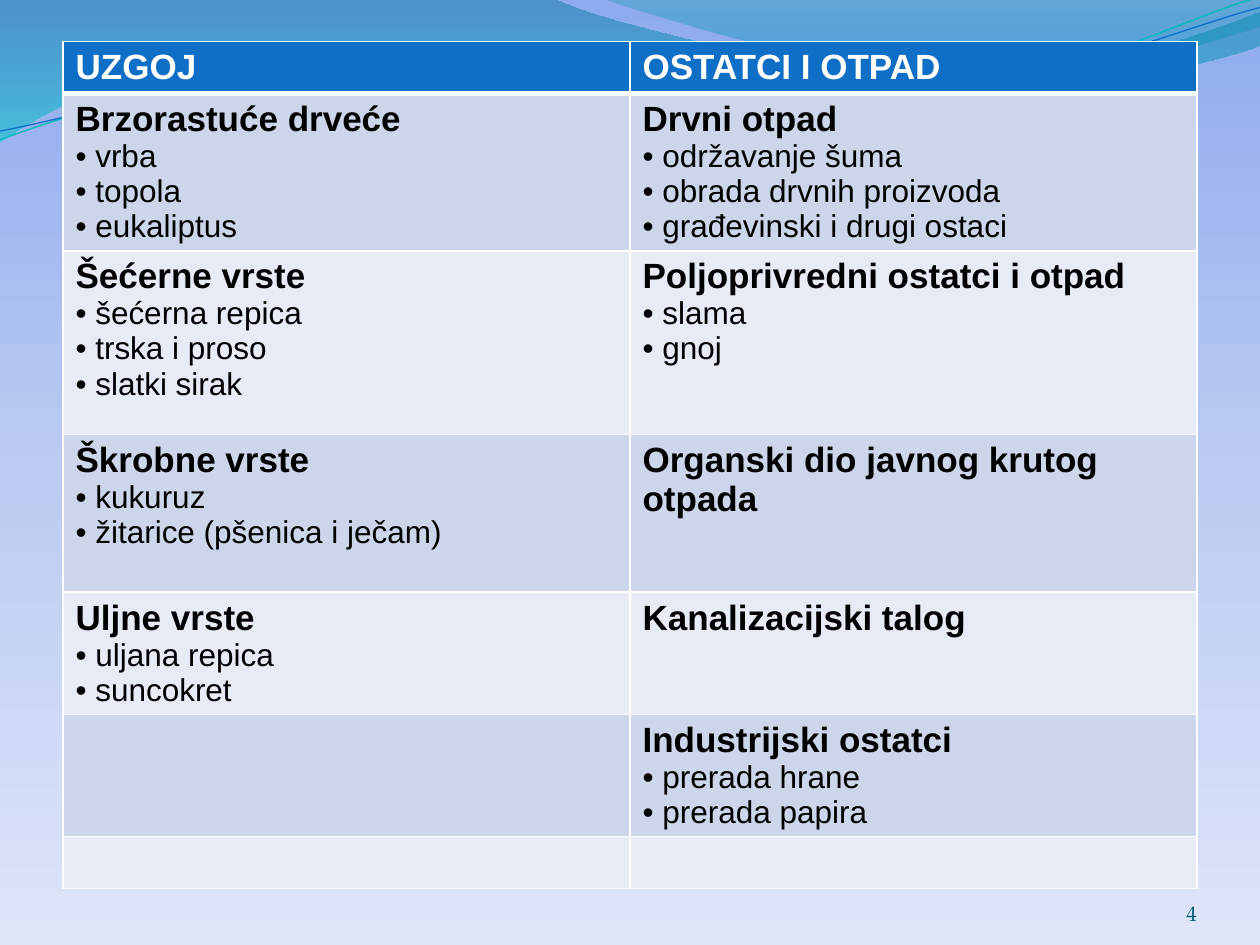
from lxml import etree
from pptx import Presentation
from pptx.dml.color import RGBColor
from pptx.enum.text import MSO_ANCHOR, PP_ALIGN
from pptx.oxml.ns import qn
from pptx.util import Inches, Pt

RIGHT = PP_ALIGN.RIGHT
BOTTOM = MSO_ANCHOR.BOTTOM
BODY_FONT = "Arial"
HEADER_FILL, BAND_FILLS = "0F6FC6", ("CCD5EA", "E7EBF5")
ROW_HEIGHTS = (0.41, 1.23, 1.46, 1.25, 0.97, 0.97, 0.41)

HEADERS = ("UZGOJ", "OSTATCI I OTPAD")
ROWS = (
    (("Brzorastuće drveće", "vrba", "topola", "eukaliptus"),
     ("Drvni otpad", "održavanje šuma", "obrada drvnih proizvoda",
      "građevinski i drugi ostaci")),
    (("Šećerne vrste", "šećerna repica", "trska i proso", "slatki sirak"),
     ("Poljoprivredni ostatci i otpad", "slama", "gnoj")),
    (("Škrobne vrste", "kukuruz", "žitarice (pšenica i ječam)"),
     ("Organski dio javnog krutog otpada",)),
    (("Uljne vrste", "uljana repica", "suncokret"),
     ("Kanalizacijski talog",)),
    ((), ("Industrijski ostatci", "prerada hrane", "prerada papira")),
    ((), ()),
)

SKY = ((0, "8EABEE", 100), (50, "BBCBF2", 100), (100, "DEE5F8", 100))
WAVES = (
    (((0, 0), (4.4, -0.01), (4.76, 0.17, 6.64, 0.63, 7.58, 0.63),
      (8.53, 0.63, 9.58, 0.26, 10, 0.09), (10.01, 0.36),
      (9.83, 0.44, 8.7, 0.76, 7.46, 0.75), (6.22, 0.75, 3.82, 0.28, 2.57, 0.34),
      (1.29, 0.36, 0.46, 0.83, -0.01, 1.13)),
     ((0, "0074A1", 45), (100, "00C6CF", 55))),
    (((4.79, -0.01), (5.09, 0.11, 6.82, 0.62, 7.69, 0.65),
      (8.56, 0.69, 9.61, 0.32, 10, 0.21), (10, 0)),
     ((0, "00A1A9", 30), (80, "008BBF", 45))),
)
STRANDS = (
    (((0, 1.11), (0.48, 0.93, 1.58, 0.57, 2.77, 0.52),
      (3.95, 0.47, 5.93, 0.89, 7.13, 0.8), (8.33, 0.71, 9.38, 0.15, 9.98, -0.02)),
     "0AB8BF", 0.85),
    (((0, 1.04), (0.47, 0.96, 1.64, 0.61, 2.83, 0.56),
      (4.03, 0.51, 5.97, 0.84, 7.17, 0.75), (8.36, 0.67, 9.41, 0.21, 10, 0.06)),
     "0F6FC6", 0.75),
)


def color(value):
    """Turn a hex string into a colour."""
    return RGBColor.from_string(value)


def set_gradient(fill, owner, stops):
    """Fill from top to bottom with (position, colour, opacity) stops."""
    fill.gradient()
    fill.gradient_angle = 270
    stop_list = next(owner.iter(qn("a:gsLst")))
    for old_stop in list(stop_list):
        stop_list.remove(old_stop)
    for position, value, opacity in stops:
        stop = etree.SubElement(stop_list, qn("a:gs"), pos=str(position * 1000))
        shade = etree.SubElement(stop, qn("a:srgbClr"), val=value)
        if opacity < 100:
            etree.SubElement(shade, qn("a:alpha"), val=str(opacity * 1000))


def merge_curves(shape, segments):
    """Join each three line steps of a curved segment into one cubic curve."""
    steps = iter(list(shape._element.iter(qn("a:lnTo"))))
    for segment in segments:
        first = next(steps)
        if len(segment) == 6:
            curve = etree.Element(qn("a:cubicBezTo"))
            first.addprevious(curve)
            for step in (first, next(steps), next(steps)):
                curve.append(step[0])
                step.getparent().remove(step)


def add_outline(page, segments, closed):
    """Draw a start point followed by line ends and curve controls."""
    places = [(Inches(segment[index]), Inches(segment[index + 1]))
              for segment in segments for index in range(0, len(segment), 2)]
    builder = page.shapes.build_freeform(*places[0])
    builder.add_line_segments(places[1:], close=closed)
    shape = builder.convert_to_shape()
    merge_curves(shape, segments[1:])
    shape.shadow.inherit = False
    return shape


def add_wave(page, segments, stops):
    """Add a translucent wave."""
    shape = add_outline(page, segments, True)
    set_gradient(shape.fill, shape._element, stops)
    shape.line.fill.background()


def add_strand(page, segments, value, width):
    """Add a thin curved line."""
    shape = add_outline(page, segments, False)
    shape.fill.background()
    shape.line.color.rgb = color(value)
    shape.line.width = Pt(width)


def write(para, text, size=18, font=BODY_FONT, value="000000", bold=False,
          align=None, bullet=None):
    """Write formatted text into a paragraph."""
    span = para.add_run()
    span.text = text
    span.font.size = Pt(size)
    span.font.name = font
    span.font.bold = bold
    span.font.color.rgb = color(value)
    if align is not None:
        para.alignment = align
    if bullet:
        properties = para._p.get_or_add_pPr()
        etree.SubElement(properties, qn("a:buFont"), typeface=font)
        etree.SubElement(properties, qn("a:buChar"), char=bullet)


def style_cell(cell, value, top=1, bottom=1):
    """Give a cell white borders and a fill."""
    properties = cell._tc.get_or_add_tcPr()
    for side, width in (("L", 1), ("R", 1), ("T", top), ("B", bottom)):
        border = etree.SubElement(properties, qn(f"a:ln{side}"), w=str(Pt(width)))
        paint = etree.SubElement(border, qn("a:solidFill"))
        etree.SubElement(paint, qn("a:srgbClr"), val="FFFFFF")
    cell.fill.solid()
    cell.fill.fore_color.rgb = color(value)


def fill_cell(cell, lines):
    """Write a bold heading and its bulleted items."""
    frame = cell.text_frame
    for index, line in enumerate(lines):
        if index == 0:
            write(frame.paragraphs[0], line, size=20, bold=True)
        else:
            write(frame.add_paragraph(), f" {line}", bullet="•")


def add_biomass_table(page):
    """Add the table of biomass sources."""
    table = page.shapes.add_table(len(ROW_HEIGHTS), len(HEADERS), Inches(0.5), Inches(0.33),
                                  Inches(9), Inches(sum(ROW_HEIGHTS))).table
    for row, height in zip(table.rows, ROW_HEIGHTS):
        row.height = Inches(height)
    for column, header in enumerate(HEADERS):
        cell = table.cell(0, column)
        style_cell(cell, HEADER_FILL, bottom=3)
        write(cell.text_frame.paragraphs[0], header, size=20, value="FFFFFF", bold=True)
    for number, contents in enumerate(ROWS, start=1):
        for column, lines in enumerate(contents):
            cell = table.cell(number, column)
            style_cell(cell, BAND_FILLS[(number - 1) % 2], top=3 if number == 1 else 1)
            fill_cell(cell, lines)


def add_page_number(page, text):
    """Add the page number at the lower right."""
    box = page.shapes.add_textbox(Inches(8.67), Inches(6.95), Inches(0.83), Inches(0.4))
    frame = box.text_frame
    frame.word_wrap = True
    frame.vertical_anchor = BOTTOM
    frame.margin_left = frame.margin_right = frame.margin_top = frame.margin_bottom = 0
    write(frame.paragraphs[0], text, size=12, font="TeX Gyre Pagella",
          value="045D75", align=RIGHT)


def main():
    """Build and save the deck."""
    deck = Presentation()
    deck.slide_width, deck.slide_height = Inches(10), Inches(7.5)
    page = deck.slides.add_slide(deck.slide_layouts[6])
    set_gradient(page.background.fill, page._element, SKY)
    for wave in WAVES:
        add_wave(page, *wave)
    for strand in STRANDS:
        add_strand(page, *strand)
    add_biomass_table(page)
    add_page_number(page, "4")
    deck.save("out.pptx")


if __name__ == "__main__":
    main()
